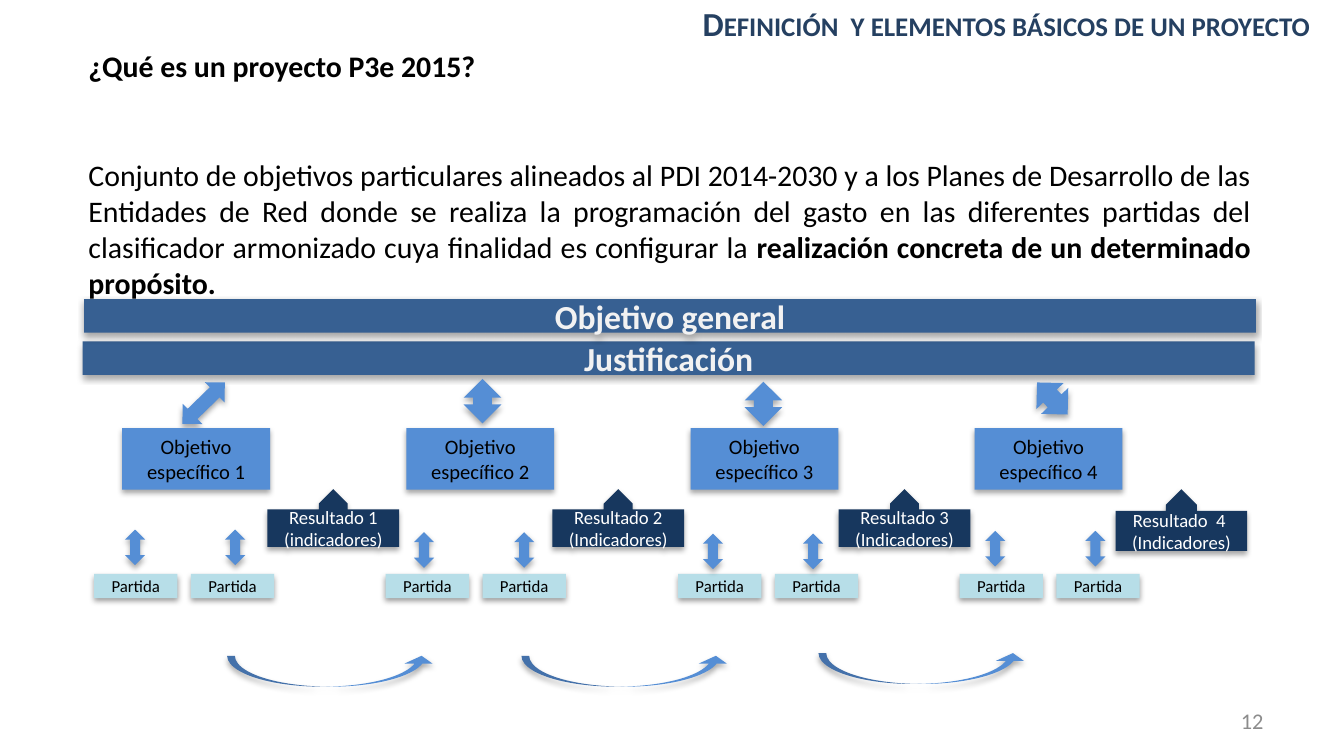
from lxml import etree
from pptx import Presentation
from pptx import util as u
from pptx.dml.color import RGBColor
from pptx.enum import shapes, text
from pptx.oxml.ns import qn

COLORS = {
    "title": "254061", "bar": "376092", "objective": "558ED5", "result": "17375E",
    "item": "B7DEE8", "black": "000000", "white": "FFFFFF", "light": "F2F2F2",
    "number": "8C8C8C",
}
KINDS = shapes.MSO_SHAPE
ALIGN = text.PP_ALIGN

presentation = Presentation()
presentation.slide_width = u.Inches(10)
presentation.slide_height = presentation.slide_width * 9 // 16
slide = presentation.slides.add_slide(presentation.slide_layouts[6])
column = presentation.slide_width / 100
row = presentation.slide_height / 56.25


def write(shape, lines, size, color, bold=False, align=ALIGN.CENTER):
    frame = shape.text_frame
    frame.word_wrap = True
    frame.vertical_anchor = text.MSO_ANCHOR.MIDDLE
    frame.text = "\n".join(lines)
    for paragraph in frame.paragraphs:
        paragraph.alignment = align
        paragraph.font.name = "Calibri"
        paragraph.font.size = u.Pt(size)
        paragraph.font.bold = bold
        paragraph.font.color.rgb = RGBColor.from_string(COLORS[color])
    return frame


def add_block(kind, left, top, width, height, fill, opacity=35, distance=1.8):
    shape = slide.shapes.add_shape(
        kind, int(left * column), int(top * row), int(width * column), int(height * row))
    shape.fill.solid()
    shape.fill.fore_color.rgb = RGBColor.from_string(COLORS[fill])
    shape.line.fill.background()
    shape.shadow.inherit = False
    effects = shape._element.spPr.find(qn("a:effectLst"))
    shadow = etree.SubElement(
        effects, qn("a:outerShdw"), blurRad=str(u.Pt(3.1)), dist=str(u.Pt(distance)),
        dir="5400000", rotWithShape="0")
    tint = etree.SubElement(shadow, qn("a:srgbClr"), val=COLORS["black"])
    etree.SubElement(tint, qn("a:alpha"), val=str(opacity * 1000))
    return shape


title = slide.shapes.add_textbox(
    int(51.3 * column), int(0.1 * row), int(48.5 * column), int(3.7 * row))
frame = write(title, ["Definición  y elementos básicos de un proyecto"], 18, "title", True, ALIGN.LEFT)
frame.word_wrap = False
frame.vertical_anchor = text.MSO_ANCHOR.TOP
frame.paragraphs[0].line_spacing = 0.9
frame.paragraphs[0].runs[0]._r.get_or_add_rPr().set("cap", "small")

definition = slide.shapes.add_textbox(
    int(5.6 * column), int(3 * row), int(88.5 * column), int(19.9 * row))
frame = write(definition, [
    "¿Qué es un proyecto P3e 2015?",
    "Conjunto de objetivos particulares alineados al PDI 2014-2030 y a los Planes de "
    "Desarrollo de las Entidades de Red donde se realiza la programación del gasto en las "
    "diferentes partidas del clasificador armonizado cuya finalidad es configurar la ",
], 16, "black", align=ALIGN.JUSTIFY)
question, answer = frame.paragraphs
question.font.bold = True
question.space_after = u.Pt(39)
purpose = answer.add_run()
purpose.text = "realización concreta de un determinado propósito."
purpose.font.bold = True

for label, left, top in [("Justificación", 6.15, 25.4), ("Objetivo general", 6.25, 22.25)]:
    bar = add_block(KINDS.RECTANGLE, left, top, 87.2, 2.5, "bar")
    write(bar, [label], 18, "light", True)

for left, top, width, height, angle in [
    (14.1, 27.8, 2.1, 4.4, 45.8), (34.5, 28.2, 2.8, 3.3, 0),
    (55.4, 28.4, 2.8, 3.3, 0), (76.9, 28, 2.8, 3.3, 316.3),
]:
    arrow = add_block(KINDS.UP_DOWN_ARROW, left, top, width, height, "objective")
    arrow.rotation = angle

groups = [
    (19.9, 4.3, ["Resultado 1", "(indicadores)"], 7, 9.3, 39.4),
    (41.1, 4.3, ["Resultado 2", "(Indicadores)"], 28.7, 30.8, 39.6),
    (62.4, 4.3, ["Resultado 3", "(Indicadores)"], 50.45, 52.3, 39.7),
    (83, 4.6, ["Resultado  4 ", "(Indicadores)"], 71.4, 73.3, 39.5),
]
for index, (result_left, result_height, lines, item_left, arrow_left, arrow_top) in enumerate(groups):
    objective = add_block(KINDS.RECTANGLE, 9.1 + 21.14 * index, 31.85, 11, 4.6, "objective")
    write(objective, [f"Objetivo específico {index + 1}"], 11, "black")

    result = add_block(KINDS.UP_ARROW_CALLOUT, result_left, 36.4, 9.8, result_height, "result")
    for position, value in enumerate([0.5, 0.25, 0.25, 0.65]):
        result.adjustments[position] = value
    write(result, lines, 10, "white")

    for side in range(2):
        item = add_block(KINDS.RECTANGLE, item_left + 7.2 * side, 42.7, 6.2, 1.8, "item", 38, 1.6)
        write(item, ["Partida"], 9, "black")
        add_block(KINDS.UP_DOWN_ARROW, arrow_left + 7.45 * side, arrow_top, 1.5, 2.65, "objective")

for left, top in [(16.9, 48.8), (38.8, 48.8), (60.9, 48.6)]:
    curve = add_block(KINDS.CURVED_UP_ARROW, left, top, 15.5, 2.3, "objective")
    for position, value in enumerate([0.25, 0.9, 0.25]):
        curve.adjustments[position] = value

number = slide.shapes.add_textbox(
    int(71.7 * column), int(52.1 * row), int(23.3 * column), int(3 * row))
write(number, ["12"], 12, "number", align=ALIGN.RIGHT)

presentation.save("out.pptx")
